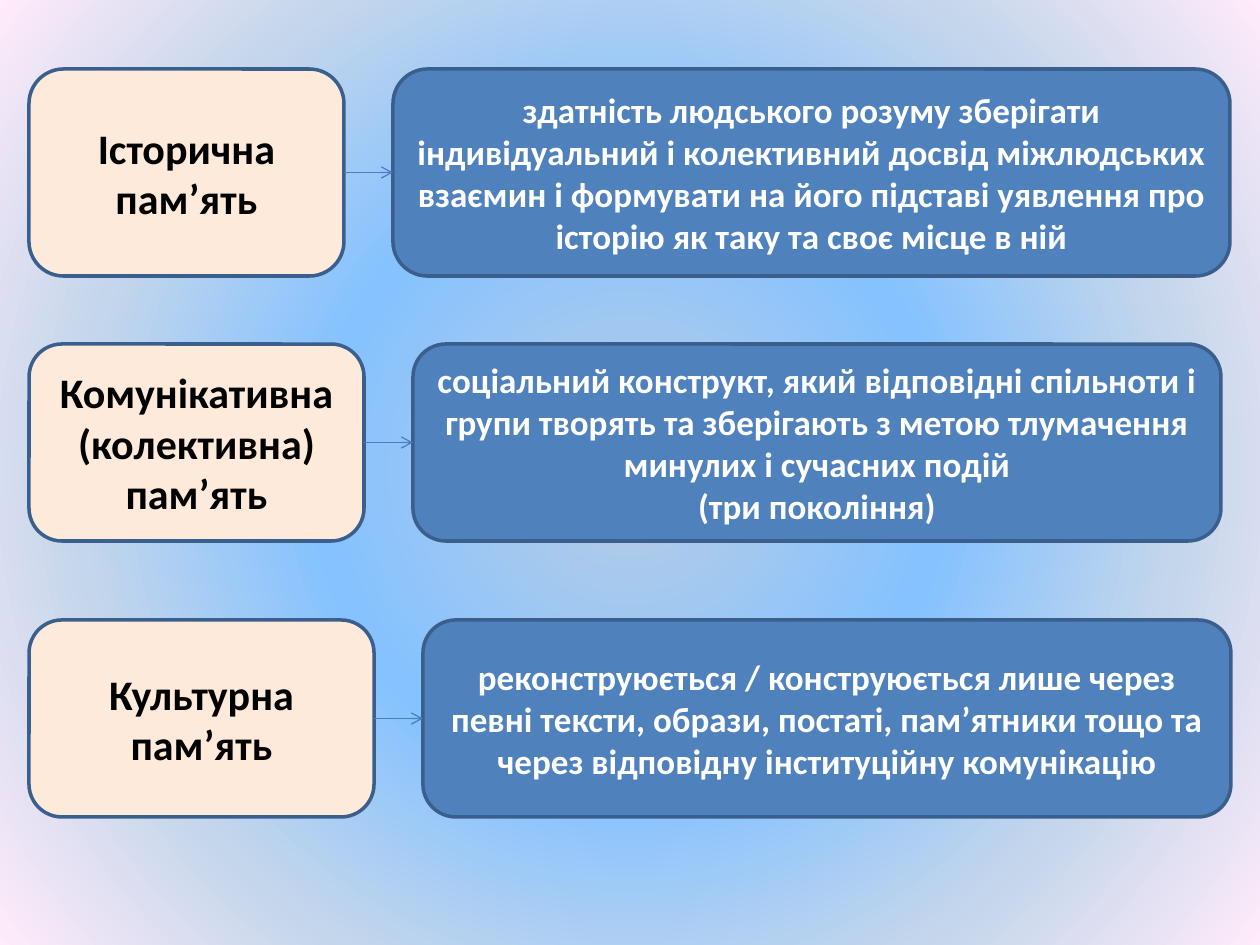
"""Builds a slide that defines three kinds of memory, one term and arrow per row."""
from pptx import Presentation
from pptx import oxml
from pptx import util as u
from pptx.dml.color import RGBColor
from pptx.enum import shapes, text
from pptx.oxml import ns

ROWS = [
    {"term": "Історична пам’ять",
     "meaning": ["здатність людського розуму зберігати індивідуальний і колективний "
                 "досвід міжлюдських взаємин і формувати на його підставі уявлення "
                 "про історію як таку та своє місце в ній"],
     "top": 69, "height": 207, "term_w": 315, "meaning_w": 837},
    {"term": "Комунікативна (колективна) пам’ять",
     "meaning": ["соціальний конструкт, який відповідні спільноти і групи творять та "
                 "зберігають з метою тлумачення минулих і сучасних подій",
                 "(три покоління)"],
     "top": 344, "height": 197, "term_w": 335, "meaning_w": 808},
    {"term": "Культурна пам’ять",
     "meaning": ["реконструюється / конструюється лише через певні тексти, образи, "
                 "постаті, пам’ятники тощо та через відповідну інституційну комунікацію"],
     "top": 620, "height": 197, "term_w": 345, "meaning_w": 808},
]
COLORS = {"term": "FDEADA", "meaning": "4F81BD", "border": "3A5F8C",
          "arrow": "4B7EBC", "dark": "000000", "light": "FFFFFF"}
GLOW = [(0, "B9CDE5"), (40, "85C2FF"), (70, "C4D6EB"), (100, "FFEBFA")]
FONT = "Calibri"
LEFT, GAP = 29, 49
SCALE = 914400 / 126


def px(n):
    return u.Emu(round(n * SCALE))


def color(name):
    return RGBColor.from_string(COLORS[name])


def set_background(s):
    stops = "".join(f'<a:gs pos="{pos * 1000}"><a:srgbClr val="{c}"/></a:gs>'
                    for pos, c in GLOW)
    s.element.cSld.insert(0, oxml.parse_xml(
        f'<p:bg {ns.nsdecls("p", "a")}><p:bgPr><a:gradFill rotWithShape="1">'
        f'<a:gsLst>{stops}</a:gsLst><a:path path="circle">'
        '<a:fillToRect l="50000" t="50000" r="50000" b="50000"/></a:path>'
        '</a:gradFill><a:effectLst/></p:bgPr></p:bg>'))


def add_box(s, x, y, w, h, paragraphs, fill, ink, size):
    sp = s.shapes.add_shape(shapes.MSO_SHAPE.ROUNDED_RECTANGLE, px(x), px(y), px(w), px(h))
    sp.shadow.inherit = False
    sp.fill.solid()
    sp.fill.fore_color.rgb = color(fill)
    sp.line.color.rgb = color("border")
    sp.line.width = u.Pt(2)
    tf = sp.text_frame
    tf.word_wrap = True
    tf.vertical_anchor = text.MSO_ANCHOR.MIDDLE
    tf.text = "\n".join(paragraphs)
    for p in tf.paragraphs:
        p.alignment = text.PP_ALIGN.CENTER
        for r in p.runs:
            r.font.name = FONT
            r.font.size = u.Pt(size)
            r.font.bold = True
            r.font.color.rgb = color(ink)


def add_arrow(s, x1, x2, y):
    line = s.shapes.add_connector(shapes.MSO_CONNECTOR.STRAIGHT, px(x1), px(y), px(x2), px(y))
    line.line.color.rgb = color("arrow")
    line.line.width = u.Pt(0.75)
    line.line._get_or_add_ln().append(
        oxml.parse_xml(f'<a:tailEnd {ns.nsdecls("a")} type="arrow"/>'))
    line.element.spPr.append(oxml.parse_xml(f'<a:effectLst {ns.nsdecls("a")}/>'))


def main():
    prs = Presentation()
    prs.slide_width, prs.slide_height = px(1260), px(945)
    s = prs.slides.add_slide(prs.slide_layouts[6])
    set_background(s)
    for row in ROWS:
        y, h = row["top"], row["height"]
        term_right = LEFT + row["term_w"]
        x = term_right + GAP
        add_box(s, LEFT, y, row["term_w"], h, [row["term"]], "term", "dark", 24)
        add_box(s, x, y, row["meaning_w"], h, row["meaning"], "meaning", "light", 20)
        add_arrow(s, term_right, x, y + h / 2)
    prs.save("out.pptx")


if __name__ == "__main__":
    main()
